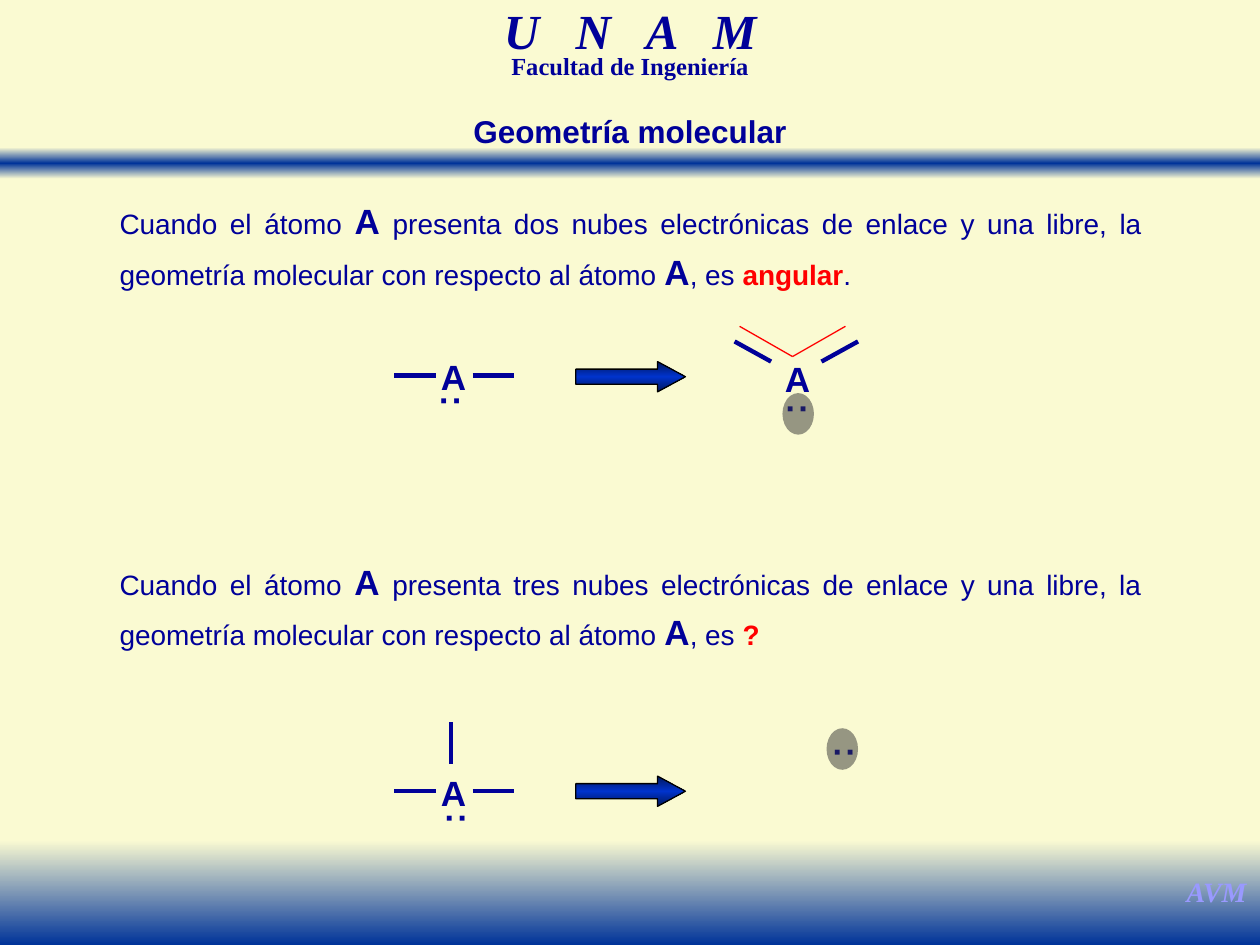
from collections import namedtuple
from copy import deepcopy

from lxml.etree import SubElement
from pptx import Presentation
from pptx.dml.color import RGBColor
from pptx.enum.shapes import MSO_CONNECTOR, MSO_SHAPE
from pptx.enum.text import MSO_AUTO_SIZE, PP_ALIGN
from pptx.oxml.ns import qn
from pptx.util import Inches, Pt

CREAM = RGBColor(0xFA, 0xFA, 0xD2)
BLUE = RGBColor(0x00, 0x33, 0x99)
NAVY = RGBColor(0x00, 0x00, 0x99)
ARROW_EDGE = RGBColor(0x00, 0x17, 0x5C)
ARROW_CORE = RGBColor(0x00, 0x33, 0xCC)
LILAC = RGBColor(0x99, 0x99, 0xFF)
RED = RGBColor(0xFF, 0x00, 0x00)
GREY = RGBColor(0x33, 0x33, 0x33)
BLACK = RGBColor(0, 0, 0)

SANS, SERIF = "Arial", "Times New Roman"
COLS, ROWS = 100, 75  # grid of square cells over the whole slide
CELL = 0.1

Box = namedtuple("Box", "left top width height")
Run = namedtuple("Run", "text size color bold italic font",
                 defaults=(16, NAVY, False, False, SANS))


def cells(*counts):
    return [Inches(count * CELL) for count in counts]


def within(box, dx, dy, width, height):
    return Box(box.left + dx, box.top + dy, width, height)


def add_text(slide, box, runs, align, spacing=None, wrap=True, inset=True, rotation=0):
    text_box = slide.shapes.add_textbox(*cells(*box))
    text_box.rotation = rotation
    frame = text_box.text_frame
    frame.word_wrap = wrap
    frame.auto_size = MSO_AUTO_SIZE.SHAPE_TO_FIT_TEXT
    if not inset:
        frame.margin_left = frame.margin_right = 0
        frame.margin_top = frame.margin_bottom = 0
    paragraph = frame.paragraphs[0]
    paragraph.alignment = align
    if spacing:
        paragraph.line_spacing = spacing
    for part in runs:
        run = paragraph.add_run()
        run.text = part.text
        font = run.font
        font.name, font.size = part.font, Pt(part.size)
        font.bold, font.italic = part.bold, part.italic
        font.color.rgb = part.color
    return paragraph


def add_filled(slide, preset, box):
    shape = slide.shapes.add_shape(preset, *cells(*box))
    shape.shadow.inherit = False
    shape.line.fill.background()
    return shape


def fill_downward(shape, *colors):
    """Fill with evenly spaced colours from top to bottom."""
    shape.fill.gradient()
    shape.fill.gradient_angle = 270
    stop_list = shape._element.spPr.find(".//" + qn("a:gsLst"))
    for _ in colors[2:]:
        stop_list.insert(1, deepcopy(stop_list[0]))
    for index, (stop, color) in enumerate(zip(shape.fill.gradient_stops, colors)):
        stop.position = index / (len(colors) - 1)
        stop.color.rgb = color


def add_line(slide, box, start, end, color=NAVY, weight=2.5):
    ends = cells(box.left + start[0], box.top + start[1],
                 box.left + end[0], box.top + end[1])
    line = slide.shapes.add_connector(MSO_CONNECTOR.STRAIGHT, *ends)
    line.line.color.rgb = color
    line.line.width = Pt(weight)
    SubElement(line._element.spPr, qn("a:effectLst"))


def add_bands(slide):
    divider = add_filled(slide, MSO_SHAPE.RECTANGLE, Box(0, 11.7, COLS, 2.5))
    fill_downward(divider, CREAM, BLUE, CREAM)
    footer = add_filled(slide, MSO_SHAPE.RECTANGLE, Box(0, 66.7, COLS, ROWS - 66.7))
    fill_downward(footer, CREAM, BLUE)
    add_text(slide, Box(93.1, 68.9, 6.9, 3.7),
             [Run("AVM", 16, LILAC, True, True, SERIF)], PP_ALIGN.CENTER, wrap=False)


def add_header(slide, box):
    school = add_text(slide, within(box, 0, 0, box.width, 4.3),
                      [Run("U N A ", 28, NAVY, True, True, SERIF),
                       Run("M", 28, NAVY, True, True, SERIF)],
                      PP_ALIGN.CENTER, spacing=0.7)
    # Wide tracking on all but the last letter keeps the name centred.
    school.runs[0].font._element.set("spc", "700")
    add_text(slide, within(box, 0, 3.4, box.width, 2.6),
             [Run("Facultad de Ingeniería", 14, NAVY, True, False, SERIF)],
             PP_ALIGN.CENTER, spacing=0.7)
    add_text(slide, within(box, 0, 7.6, box.width, 4),
             [Run("Geometría molecular", 18, NAVY, True)], PP_ALIGN.CENTER)


def add_statement(slide, box, clouds, answer):
    atom = Run("A", 20, bold=True)
    runs = [Run("Cuando el átomo "), atom,
            Run(f" presenta {clouds} nubes electrónicas de enlace y una libre, "
                "la geometría molecular con respecto al átomo "),
            atom, Run(", es "), *answer]
    add_text(slide, box, runs, PP_ALIGN.JUSTIFY, spacing=1.2)


def add_atom(slide, box):
    add_text(slide, box, [Run("A", 20, bold=True)], PP_ALIGN.JUSTIFY,
             wrap=False, inset=False)


def add_electron_pair(slide, box, rotation):
    add_text(slide, box, [Run(":", 20, bold=True)], PP_ALIGN.JUSTIFY,
             wrap=False, rotation=rotation)


def add_cloud(slide, box):
    cloud = add_filled(slide, MSO_SHAPE.OVAL, box)
    cloud.fill.solid()
    cloud.fill.fore_color.rgb = GREY
    color = cloud._element.spPr.find(".//" + qn("a:srgbClr"))
    SubElement(color, qn("a:alpha"), val="50000")


def add_arrow(slide, box):
    arrow = add_filled(slide, MSO_SHAPE.RIGHT_ARROW, box)
    arrow.adjustments[0], arrow.adjustments[1] = 0.5, 0.92
    fill_downward(arrow, ARROW_EDGE, ARROW_CORE, ARROW_EDGE)
    arrow.line.color.rgb = BLACK
    arrow.line.width = Pt(0.75)


def add_lewis(slide, box, pair_shift, rotation, upper_bond=False):
    """Atom with a bond on each side and a free pair below."""
    add_atom(slide, box)
    for start in (2.5, -3.7):
        add_line(slide, box, (start, 1.6), (start + 3.3, 1.6))
    if upper_bond:
        add_line(slide, box, (0.8, -0.6), (0.8, -3.9))
    add_electron_pair(slide, within(box, *pair_shift, 2.9, 4.3), rotation)


def add_angular(slide, box):
    add_atom(slide, box)
    middle = 0.9
    for side in (-1, 1):
        add_line(slide, box, (middle + side * 2, 0.3), (middle + side * 4.9, -1.3))
    add_electron_pair(slide, within(box, -0.1, 1.9, 2.9, 4.3), 90)
    add_cloud(slide, within(box, -0.2, 2.8, 2.5, 3.3))
    vertex = (0.6, -0.1)
    for side in (-1, 1):
        add_line(slide, box, vertex, (vertex[0] + side * 4.2, -2.5), RED, 0.75)


def main():
    deck = Presentation()
    deck.slide_width, deck.slide_height = cells(COLS, ROWS)
    slide = deck.slides.add_slide(deck.slide_layouts[6])
    slide.background.fill.solid()
    slide.background.fill.fore_color.rgb = CREAM

    add_bands(slide)
    add_header(slide, Box(30.4, 0.8, 39.2, 11.6))

    add_statement(slide, Box(8.5, 14.7, 83.1, 8.7), "dos",
                  [Run("angular", color=RED, bold=True), Run(".")])
    add_lewis(slide, Box(35, 28.2, 2, 3.3), (-0.3, 1.5), 90)
    add_arrow(slide, Box(45.7, 28.7, 8.7, 2.4))
    add_angular(slide, Box(62.3, 28.4, 2, 3.3))

    add_statement(slide, Box(8.5, 43.3, 83.1, 8.7), "tres",
                  [Run("?", color=RED, bold=True)])
    add_lewis(slide, Box(35, 61.2, 2, 3.3), (-0.7, 1.6), 270, upper_bond=True)
    add_arrow(slide, Box(45.7, 61.6, 8.7, 2.4))
    add_electron_pair(slide, Box(65.1, 57.6, 2.9, 4.3), 270)
    add_cloud(slide, Box(65.6, 57.8, 2.5, 3.3))

    deck.save("out.pptx")


if __name__ == "__main__":
    main()
